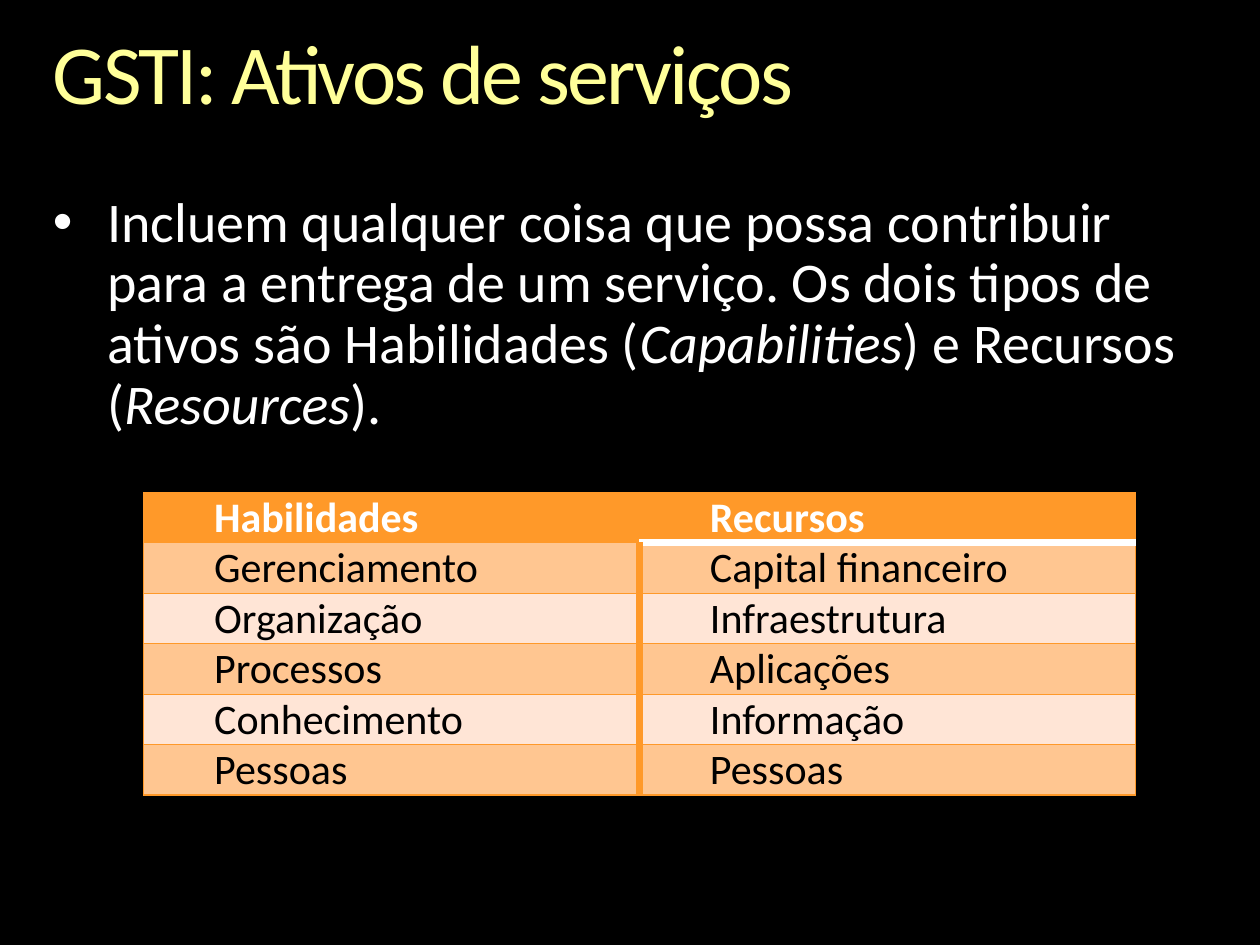
from lxml import etree
from pptx import Presentation
from pptx import util as u
from pptx.dml.color import RGBColor
from pptx.enum import text
from pptx.oxml import ns

ORANGE, PEACH, PALE = "FF9929", "FFC691", "FFE5D6"
WHITE, BLACK, YELLOW = "FFFFFF", "000000", "FFFF99"
THIN, THICK = 0.75, 4.33


def format_font(font, color, **values):
    font.color.rgb = RGBColor.from_string(color)
    for name, value in {"name": "Calibri", **values}.items():
        setattr(font, name, value)


def add_border(cell, side, color, width):
    properties = cell._tc.get_or_add_tcPr()
    line = etree.SubElement(properties, ns.qn(f"a:ln{side}"), w=str(u.Pt(width)))
    fill = etree.SubElement(line, ns.qn("a:solidFill"))
    etree.SubElement(fill, ns.qn("a:srgbClr"), val=color)


presentation = Presentation()
presentation.slide_width, presentation.slide_height = u.Inches(10), u.Inches(7.5)
width, height = presentation.slide_width, presentation.slide_height
slide = presentation.slides.add_slide(presentation.slide_layouts[1])
slide.background.fill.solid()
slide.background.fill.fore_color.rgb = RGBColor.from_string(BLACK)

title, body = slide.placeholders
title.text_frame.text = "GSTI: Ativos de serviços"
sentence = [
    ("Incluem qualquer coisa que possa contribuir para a entrega de um serviço. "
     "Os dois tipos de ativos são Habilidades (", False),
    ("Capabilities", True),
    (") e Recursos (", False),
    ("Resources", True),
    (").", False),
]
for words, italic in sentence:
    run = body.text_frame.paragraphs[0].add_run()
    run.text = words
    format_font(run.font, WHITE, size=u.Pt(32), italic=italic)

for shape, top, share in [(title, 0.25, 0.73), (body, 1.54, 1.94)]:
    shape.left, shape.width = int(width * 0.042), int(width * 0.917)
    shape.top, shape.height = u.Inches(top), u.Inches(share)
    frame_format = {
        "margin_left": 0, "margin_top": 0, "margin_right": 0, "margin_bottom": 0,
        "word_wrap": True, "vertical_anchor": text.MSO_ANCHOR.TOP,
        "auto_size": text.MSO_AUTO_SIZE.SHAPE_TO_FIT_TEXT,
    }
    for name, value in frame_format.items():
        setattr(shape.text_frame, name, value)
    paragraph = shape.text_frame.paragraphs[0]
    paragraph.alignment = text.PP_ALIGN.LEFT
    paragraph.line_spacing = 0.9
    paragraph.space_before = u.Pt(0)

title_run = title.text_frame.paragraphs[0].runs[0]
format_font(title_run.font, YELLOW, size=u.Pt(48))
title_run._r.get_or_add_rPr().set("spc", "-150")
indent = u.Inches(0.43)
bullet = body.text_frame.paragraphs[0]._p.get_or_add_pPr()
bullet.set("marL", str(indent))
bullet.set("indent", str(-indent))

assets = [
    ("Habilidades", "Recursos"),
    ("Gerenciamento", "Capital financeiro"),
    ("Organização", "Infraestrutura"),
    ("Processos", "Aplicações"),
    ("Conhecimento", "Informação"),
    ("Pessoas", "Pessoas"),
]
table = slide.shapes.add_table(
    len(assets), 2, int(width * 0.114), int(height * 0.521),
    int(width * 0.787), int(height * 0.32)).table
for row, names in enumerate(assets):
    for column, name in enumerate(names):
        cell = table.cell(row, column)
        header = row == 0
        middle = THIN if header else THICK
        borders = {
            "L": (ORANGE, middle if column == 1 else THIN),
            "R": (ORANGE, middle if column == 0 else THIN),
            "T": (WHITE, THICK) if row == 1 and column == 1 else (ORANGE, THIN),
            "B": (WHITE, THICK) if header and column == 1 else (ORANGE, THIN),
        }
        for side, (color, line_width) in borders.items():
            add_border(cell, side, color, line_width)
        cell.fill.solid()
        fill_color = ORANGE if header else PEACH if row % 2 else PALE
        cell.fill.fore_color.rgb = RGBColor.from_string(fill_color)
        cell.margin_left = cell.margin_right = u.Inches(0.07)
        cell.margin_top = cell.margin_bottom = 0
        paragraph = cell.text_frame.paragraphs[0]
        paragraph.alignment = text.PP_ALIGN.JUSTIFY
        paragraph._p.get_or_add_pPr().set("indent", str(u.Inches(0.49)))
        run = paragraph.add_run()
        run.text = name
        format_font(run.font, WHITE if header else BLACK, size=u.Pt(24), bold=header)

presentation.save("out.pptx")
